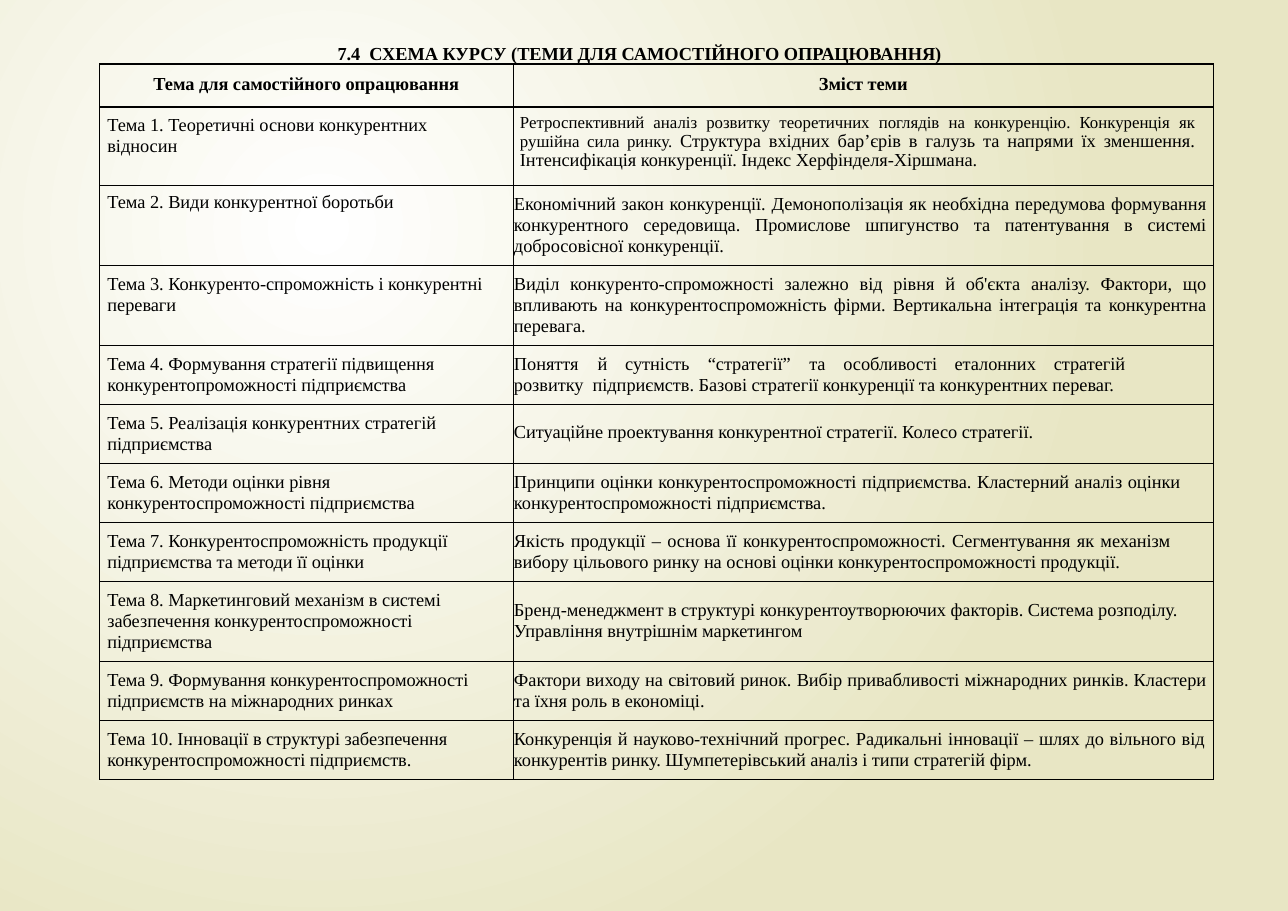
from dataclasses import dataclass

from lxml import etree
from pptx import Presentation
from pptx import util as u
from pptx.dml.color import RGBColor
from pptx.enum import text
from pptx.oxml.ns import qn


@dataclass(frozen=True)
class Theme:
    font: str = "Times New Roman"
    ink: RGBColor = RGBColor(0, 0, 0)
    glow: RGBColor = RGBColor(0xFF, 0xFF, 0xFF)
    paper: RGBColor = RGBColor(0xE8, 0xE6, 0xC4)
    size: float = 12
    small: float = 11
    leading: float = 13.8
    border: float = 1
    divider: float = 0.5
    tracking: int = -4


@dataclass
class Cell:
    text: str
    left: float = 0.7
    right: float = 0
    top: float = 5.2
    align: text.PP_ALIGN = text.PP_ALIGN.LEFT
    spacing: object = u.Pt(Theme.leading)
    bold: bool = False
    lead: str = ""
    tabs: tuple = ()


def heading(words):
    return Cell(words, 0, 0, 6.3, text.PP_ALIGN.CENTER, 1.0, True)


def topic(words, top=5.2):
    return Cell(words, left=5, right=18, top=top)


def justified(words, right=4.5, **options):
    return Cell(words, right=right, align=text.PP_ALIGN.JUSTIFY, **options)


TITLE = "7.4  СХЕМА КУРСУ (ТЕМИ ДЛЯ САМОСТІЙНОГО ОПРАЦЮВАННЯ)"
STRATEGY_TABS = (54.7, 72.7, 126.7, 193, 215.3, 288, 352.8, 411)
ROWS = [
    (28, heading("Тема для самостійного опрацювання"), heading("Зміст теми")),
    (51.2, topic("Тема 1. Теоретичні основи конкурентних відносин", 4.9),
     justified("Структура вхідних бар’єрів в галузь та напрями їх зменшення. "
               "Інтенсифікація конкуренції. Індекс Херфінделя-Хіршмана.", 12,
               lead="Ретроспективний аналіз розвитку теоретичних поглядів на конкуренцію. "
                    "Конкуренція як рушійна сила ринку. ",
               left=4.6, top=4.4, spacing=0.96)),
    (52.4, topic("Тема 2. Види конкурентної боротьби", 4.3),
     justified("Економічний закон конкуренції. Демонополізація як необхідна передумова "
               "формування конкурентного середовища. Промислове шпигунство та патентування "
               "в системі добросовісної конкуренції.")),
    (52.4, topic("Тема 3. Конкуренто-спроможність і конкурентні переваги"),
     justified("Виділ конкуренто-спроможності залежно від рівня й об'єкта аналізу. "
               "Фактори, що впливають на конкурентоспроможність фірми. Вертикальна "
               "інтеграція та конкурентна перевага.")),
    (38.6, topic("Тема 4. Формування стратегії підвищення конкурентопроможності підприємства"),
     Cell("Поняття\tй\tсутність\t“стратегії”\tта\tособливості\tеталонних\tстратегій "
          "розвитку  підприємств. Базові стратегії конкуренції та конкурентних переваг.",
          right=24, tabs=STRATEGY_TABS)),
    (38.6, topic("Тема 5. Реалізація конкурентних стратегій підприємства"),
     Cell("Ситуаційне проектування конкурентної стратегії. Колесо стратегії.", top=11)),
    (38.6, topic("Тема 6. Методи оцінки рівня конкурентоспроможності підприємства"),
     justified("Принципи оцінки конкурентоспроможності підприємства. Кластерний аналіз оцінки "
               "конкурентоспроможності підприємства.", 21.5)),
    (38.6, topic("Тема 7. Конкурентоспроможність продукції підприємства та методи її оцінки"),
     justified("Якість продукції – основа її конкурентоспроможності. Сегментування як механізм "
               "вибору цільового ринку на основі оцінки конкурентоспроможності продукції.", 28)),
    (52.4, topic("Тема 8. Маркетинговий механізм в системі "
                 "забезпечення конкурентоспроможності підприємства"),
     Cell("Бренд-менеджмент в структурі конкурентоутворюючих факторів. Система розподілу. "
          "Управління внутрішнім маркетингом", top=11.6)),
    (38.6, topic("Тема 9. Формування конкурентоспроможності підприємств на міжнародних ринках"),
     justified("Фактори виходу на світовий ринок. Вибір привабливості міжнародних ринків. "
               "Кластери та їхня роль в економіці.")),
    (38.6, topic("Тема 10. Інновації в структурі забезпечення конкурентоспроможності підприємств."),
     justified("Конкуренція й науково-технічний прогрес. Радикальні інновації – шлях до "
               "вільного від конкурентів ринку. Шумпетерівський аналіз і типи стратегій фірм.",
               5.5)),
]
COLUMNS = (270, 458)
TABLE_LEFT, TABLE_TOP = 65.2, 41.9


def style_run(r, size=Theme.size, bold=False):
    r.font.name = Theme.font
    r.font.size = u.Pt(size)
    r.font.bold = bold
    r.font.color.rgb = Theme.ink
    r.font._element.set("spc", str(Theme.tracking))


def paint_background(s):
    fill = s.background.fill
    fill.gradient()
    for stop, color in zip(fill.gradient_stops, (Theme.glow, Theme.paper)):
        stop.color.rgb = color
    grad = s._element.find(".//" + qn("a:gradFill"))
    linear = grad.find(qn("a:lin"))
    circle = etree.Element(qn("a:path"), {"path": "circle"})
    etree.SubElement(circle, qn("a:fillToRect"),
                     {"l": "50000", "t": "50000", "r": "100000", "b": "100000"})
    grad.replace(linear, circle)


def add_title(s):
    sp = s.shapes.title
    sp.left, sp.top, sp.width, sp.height = (u.Pt(v) for v in (219.6, 26.6, 410, 16.6))
    tf = sp.text_frame
    tf.text = TITLE
    tf.word_wrap = True
    tf.auto_size = text.MSO_AUTO_SIZE.NONE
    tf.vertical_anchor = text.MSO_ANCHOR.TOP
    tf.margin_left = tf.margin_top = u.Pt(1)
    tf.margin_right = tf.margin_bottom = 0
    p = tf.paragraphs[0]
    p.alignment = text.PP_ALIGN.LEFT
    p.line_spacing = 1.0
    p.space_before = u.Pt(0)
    style_run(p.runs[0], bold=True)


def add_borders(cell, inner_side):
    props = cell._tc.get_or_add_tcPr()
    for side in ("lnL", "lnR", "lnT", "lnB"):
        width = Theme.divider if side == inner_side else Theme.border
        line = etree.SubElement(props, qn("a:" + side), {"w": str(u.Pt(width))})
        solid = etree.SubElement(line, qn("a:solidFill"))
        etree.SubElement(solid, qn("a:srgbClr"), {"val": str(Theme.ink)})


def add_tabs(p, stops):
    tabs = etree.SubElement(p._p.get_or_add_pPr(), qn("a:tabLst"))
    for stop in stops:
        etree.SubElement(tabs, qn("a:tab"), {"pos": str(u.Pt(stop)), "algn": "l"})


def fill_cell(cell, content):
    cell.margin_left, cell.margin_right = u.Pt(content.left), u.Pt(content.right)
    cell.margin_top, cell.margin_bottom = u.Pt(content.top), 0
    cell.fill.background()
    p = cell.text_frame.paragraphs[0]
    p.text = content.lead or content.text
    if content.lead:
        p.add_run().text = content.text
    p.alignment = content.align
    p.line_spacing = content.spacing
    if content.tabs:
        add_tabs(p, content.tabs)
    for r in p.runs:
        style_run(r, Theme.small if r.text == content.lead else Theme.size, content.bold)


def add_topics(s):
    height = sum(row[0] for row in ROWS)
    frame = s.shapes.add_table(len(ROWS), len(COLUMNS), u.Pt(TABLE_LEFT), u.Pt(TABLE_TOP),
                               u.Pt(sum(COLUMNS)), u.Pt(height))
    table = frame.table
    table.first_row = table.horz_banding = False
    for column, width in zip(table.columns, COLUMNS):
        column.width = u.Pt(width)
    for row, (row_height, *contents) in zip(table.rows, ROWS):
        row.height = u.Pt(row_height)
        for cell, content, inner_side in zip(row.cells, contents, ("lnR", "lnL")):
            add_borders(cell, inner_side)
            fill_cell(cell, content)


def main():
    prs = Presentation()
    prs.slide_width, prs.slide_height = u.Pt(841.68), u.Pt(595.44)
    s = prs.slides.add_slide(prs.slide_layouts[5])
    paint_background(s)
    add_title(s)
    add_topics(s)
    prs.save("out.pptx")


if __name__ == "__main__":
    main()
